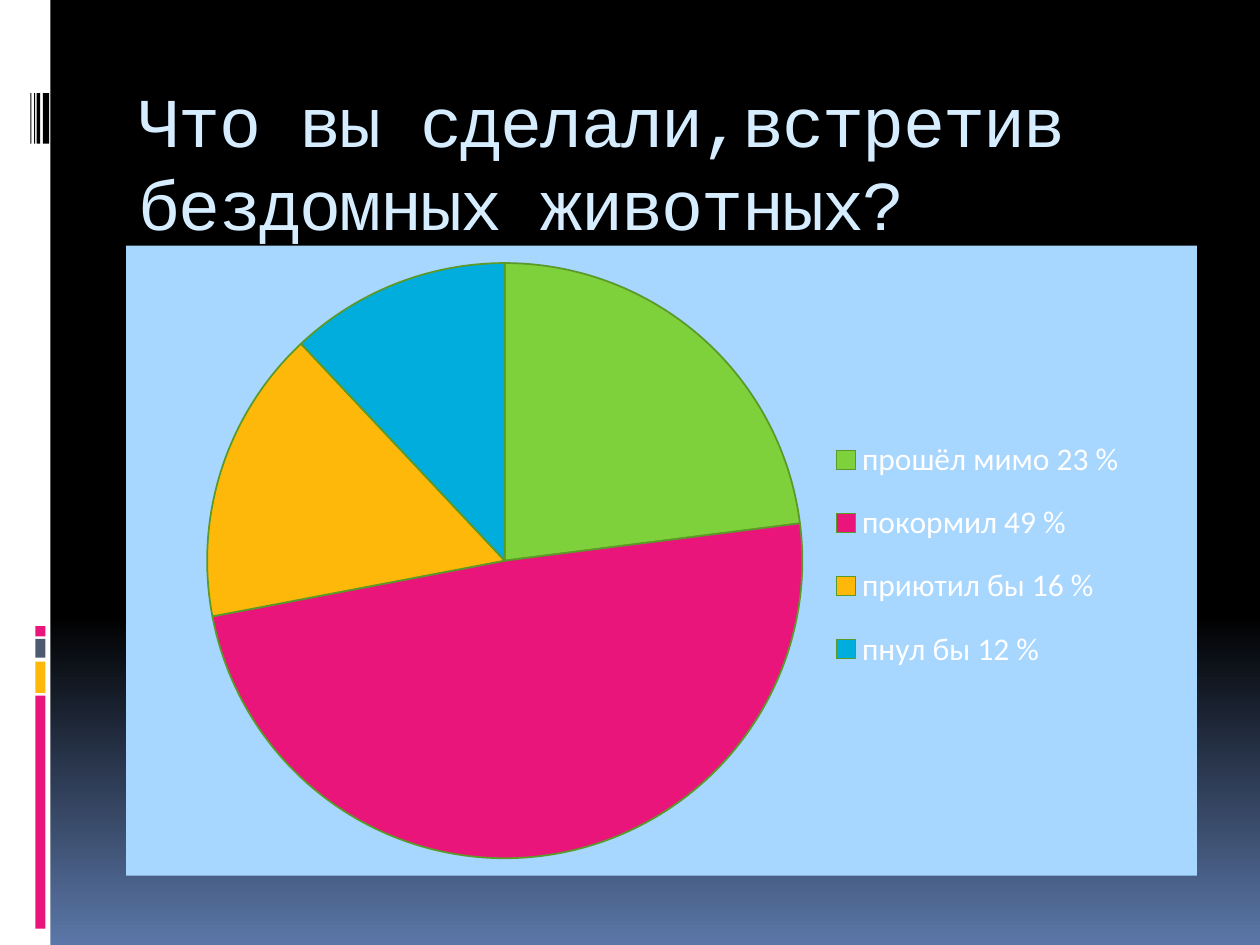
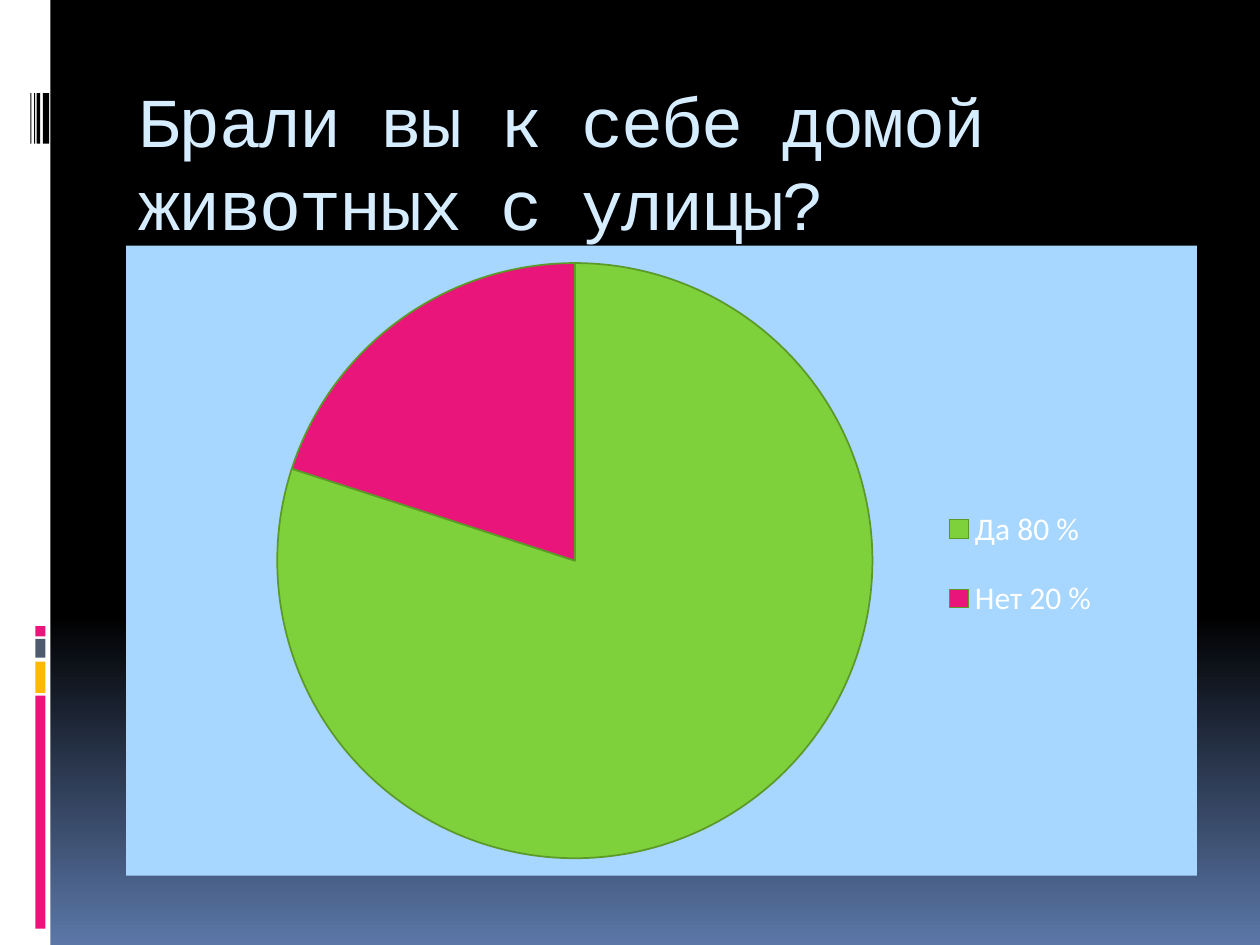
from pptx import Presentation
from pptx.chart.data import CategoryChartData
from pptx.dml.color import RGBColor
from pptx.enum.chart import XL_CHART_TYPE, XL_LEGEND_POSITION
from pptx.enum.shapes import MSO_SHAPE
from pptx.enum.text import MSO_ANCHOR, MSO_AUTO_SIZE, PP_ALIGN
from pptx.oxml import parse_xml
from pptx.oxml.ns import nsdecls, qn
from pptx.util import Inches, Pt

BLACK = RGBColor(0x00, 0x00, 0x00)
WHITE = RGBColor(0xFF, 0xFF, 0xFF)
STEEL = RGBColor(0x5B, 0x77, 0xA8)
SLATE = RGBColor(0x4E, 0x5B, 0x6F)
ICE = RGBColor(0xD6, 0xEC, 0xFF)
SKY = RGBColor(0xA7, 0xD6, 0xFF)
GREEN = RGBColor(0x7F, 0xD1, 0x3B)
DARK_GREEN = RGBColor(0x5B, 0x9A, 0x28)
PINK = RGBColor(0xEA, 0x15, 0x7A)
AMBER = RGBColor(0xFE, 0xB8, 0x0A)
BLUE = RGBColor(0x00, 0xAD, 0xDC)

SLICE_COLOURS = (GREEN, PINK, AMBER, BLUE)
COLOUR_BARS = ((4.97, 0.08, PINK), (5.07, 0.15, SLATE), (5.25, 0.25, AMBER), (5.52, 1.85, PINK))
BARCODE = ((0.24, 0.01), (0.27, 0.01), (0.29, 0.03), (0.34, 0.05))
BACKDROP = ((0, BLACK), (65, BLACK), (100, STEEL))

LEFT, WIDTH = Inches(1), Inches(8.5)
TITLE_FONT, CHART_FONT = "Courier New", "Calibri"

# Question, answers, and the legend's x, y, w, h as shares of the chart
SURVEY = (
    ("Что вы сделали,встретив бездомных животных?",
     (("прошёл мимо 23 %", 23), ("покормил 49 %", 49), ("приютил бы 16 %", 16), ("пнул бы 12 %", 12)),
     (0.63, 0.27, 0.33, 0.44)),
    ("Брали вы к себе домой животных с улицы?",
     (("Да 80 %", 80), ("Нет 20 %", 20)),
     (0.73, 0.37, 0.21, 0.27)),
)


class SurveyDeck:
    def __init__(self):
        self.deck = Presentation()
        self.deck.slide_width, self.deck.slide_height = Inches(10), Inches(7.5)
        self.layout = self.deck.slide_layouts.get_by_name("Title Only")
        self.page = None
        self.paint_backdrop()

    def paint_backdrop(self):
        stops = "".join(
            f'<a:gs pos="{percent * 1000}"><a:srgbClr val="{colour}"/></a:gs>'
            for percent, colour in BACKDROP)
        self.layout.background.fill.solid()
        solid = next(self.layout.element.iter(qn("a:solidFill")))
        solid.getparent().replace(solid, parse_xml(
            f'<a:gradFill {nsdecls("a")} rotWithShape="1"><a:gsLst>{stops}</a:gsLst>'
            '<a:lin ang="5400000" scaled="0"/></a:gradFill>'))

    def add_page(self):
        self.page = self.deck.slides.add_slide(self.layout)

    def add_block(self, left, top, width, height, colour):
        block = self.page.shapes.add_shape(
            MSO_SHAPE.RECTANGLE, Inches(left), Inches(top), Inches(width), Inches(height))
        block.shadow.inherit = False
        block.fill.solid()
        block.fill.fore_color.rgb = colour
        block.line.fill.background()
        return block

    def add_side_band(self):
        """Draw the band once and move it to the layout, so every page shows it."""
        blocks = [self.add_block(0, 0, 0.4, 7.5, WHITE)]
        blocks += [self.add_block(0.28, top, 0.08, height, colour)
                   for top, height, colour in COLOUR_BARS]
        blocks += [self.add_block(left, 0.74, width, 0.4, BLACK) for left, width in BARCODE]
        tree = self.layout.element.cSld.spTree
        for number, block in enumerate(blocks, start=100):
            block.element.nvSpPr.cNvPr.set("id", str(number))
            tree.append(block.element)

    def add_title(self, text):
        title = self.page.shapes.title
        title.left, title.top, title.width, title.height = LEFT, Inches(0.56), WIDTH, Inches(1)
        frame = title.text_frame
        frame.word_wrap = True
        frame.auto_size = MSO_AUTO_SIZE.NONE
        frame.vertical_anchor = MSO_ANCHOR.TOP
        frame.margin_top = Inches(0.06)
        para = frame.paragraphs[0]
        para.alignment = PP_ALIGN.LEFT
        para.line_spacing = Pt(47.5)
        para.space_before = Pt(0)
        span = para.add_run()
        span.text = text
        span.font.name = TITLE_FONT
        span.font.size = Pt(40)
        span.font.color.rgb = ICE
        para._p.r_lst[0].get_or_add_rPr().set("spc", "-100")

    def add_pie(self, answers, legend_area):
        data = CategoryChartData()
        data.categories = [answer for answer, _ in answers]
        data.add_series("Series 1", [percent for _, percent in answers])
        chart = self.page.shapes.add_chart(
            XL_CHART_TYPE.PIE, LEFT, Inches(1.95), WIDTH, Inches(5), data).chart
        chart.has_title = False
        chart.font.name = CHART_FONT
        chart.font.size = Pt(18)
        chart.font.color.rgb = WHITE
        plot = chart.plots[0]
        plot.vary_by_categories = True
        for index, colour in zip(range(len(answers)), SLICE_COLOURS):
            slice_format = plot.series[0].points[index].format
            slice_format.fill.solid()
            slice_format.fill.fore_color.rgb = colour
            slice_format.line.color.rgb = DARK_GREEN
            slice_format.line.width = Pt(1)
        chart.element.find(qn("c:chart")).addnext(parse_xml(
            f'<c:spPr {nsdecls("c", "a")}><a:solidFill><a:srgbClr val="{SKY}"/></a:solidFill>'
            '<a:ln><a:noFill/></a:ln></c:spPr>'))
        self.place_legend(chart, legend_area)

    def place_legend(self, chart, area):
        chart.has_legend = True
        chart.legend.position = XL_LEGEND_POSITION.RIGHT
        chart.legend.include_in_layout = False
        sizes = "".join(f'<c:{name} val="{share}"/>' for name, share in zip("xywh", area))
        layout = parse_xml(
            f'<c:layout {nsdecls("c")}><c:manualLayout><c:xMode val="edge"/>'
            f'<c:yMode val="edge"/>{sizes}</c:manualLayout></c:layout>')
        legend = next(chart.element.iter(qn("c:legend")))
        for automatic in legend.findall(qn("c:layout")):
            legend.remove(automatic)
        legend.find(qn("c:legendPos")).addnext(layout)


def main():
    survey = SurveyDeck()
    for number, (question, answers, legend_area) in enumerate(SURVEY):
        survey.add_page()
        if number == 0:
            survey.add_side_band()
        survey.add_title(question)
        survey.add_pie(answers, legend_area)
    survey.deck.save("out.pptx")


if __name__ == "__main__":
    main()
